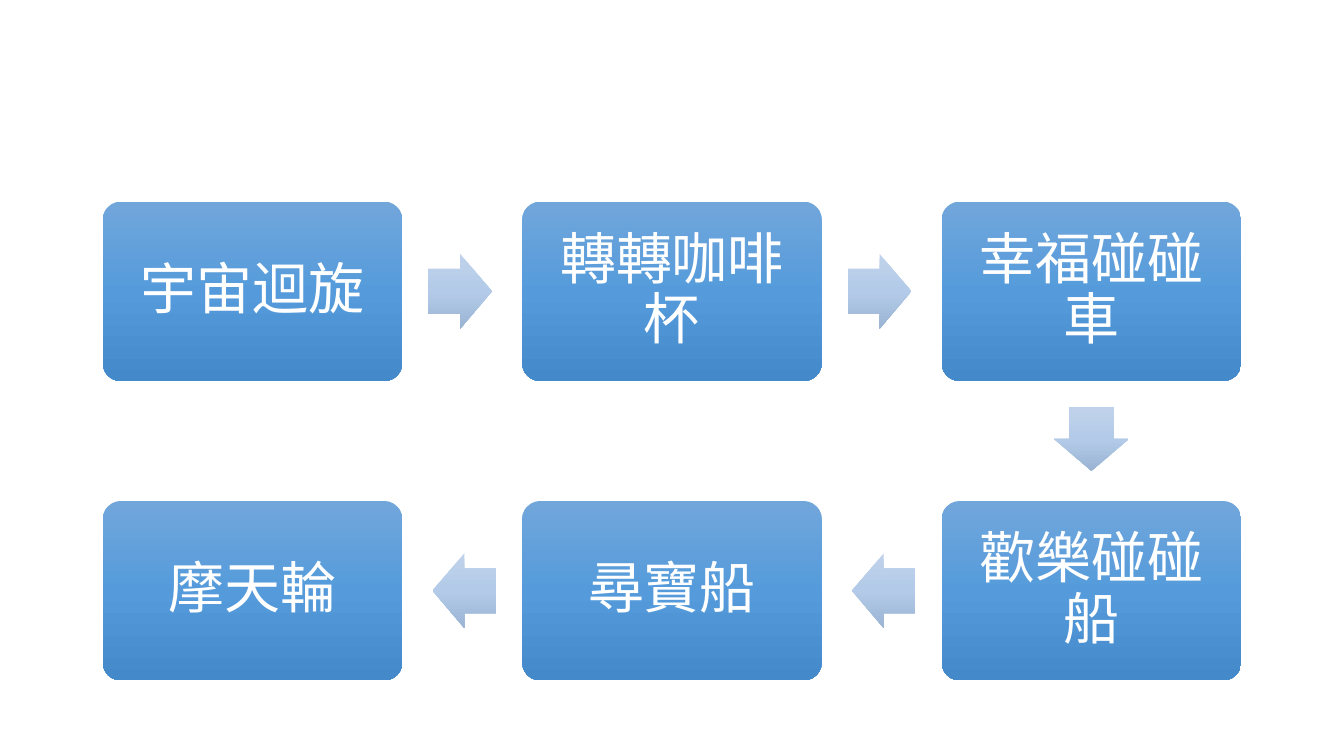
"""Build a slide with a snaking six-step route of amusement rides."""
from dataclasses import dataclass
from itertools import pairwise

from lxml import etree
from pptx import Presentation
from pptx import util as u
from pptx.enum import shapes, text
from pptx.oxml import ns


@dataclass(frozen=True)
class Theme:
    font: str = "Calibri"
    label_size: int = 40
    label_color: str = "FFFFFF"
    ride_stops: tuple = ("71A6DB", "559BDB", "448ACA")
    arrow_stops: tuple = ("C0D2EB", "B3CBE9", "9BB4D3")


RIDES = ("宇宙迴旋", "轉轉咖啡杯", "幸福碰碰車", "歡樂碰碰船", "尋寶船", "摩天輪")
COLUMNS = 3
LEFT, TOP = 1.02, 2
COLUMN_STEP, ROW_STEP = 4.16, 2.97
RIDE_WIDTH, RIDE_HEIGHT = 2.97, 1.78
ARROW_LENGTH, ARROW_BREADTH = 0.63, 0.74
ARROW_GAP = 0.26
PADDING = 0.17


class RouteSlide:
    def __init__(self, slide, theme):
        self.slide = slide
        self.theme = theme

    def gradient_shape(self, kind, center, size, stops, adjustments):
        (x, y), (width, height) = center, size
        shape = self.slide.shapes.add_shape(
            kind, u.Inches(x - width / 2), u.Inches(y - height / 2),
            u.Inches(width), u.Inches(height))
        for index, value in enumerate(adjustments):
            shape.adjustments[index] = value
        shape.shadow.inherit = False
        shape.line.fill.background()
        shape.fill.gradient()
        shape.fill.gradient_angle = 270
        gradient = shape._element.spPr.find(ns.qn("a:gradFill"))
        gradient.set("rotWithShape", "0")
        stop_list = gradient.find(ns.qn("a:gsLst"))
        stop_list.clear()
        for index, color in enumerate(stops):
            position = 100000 * index // (len(stops) - 1)
            stop = etree.SubElement(stop_list, ns.qn("a:gs"), pos=str(position))
            etree.SubElement(stop, ns.qn("a:srgbClr"), val=color)
        return shape

    def ride(self, name, center):
        shape = self.gradient_shape(
            shapes.MSO_SHAPE.ROUNDED_RECTANGLE, center,
            (RIDE_WIDTH, RIDE_HEIGHT), self.theme.ride_stops, (0.1,))
        frame = shape.text_frame
        frame.word_wrap = True
        frame.vertical_anchor = text.MSO_ANCHOR.MIDDLE
        frame.margin_left = frame.margin_right = u.Inches(PADDING)
        frame.margin_top = frame.margin_bottom = u.Inches(PADDING)
        paragraph = frame.paragraphs[0]
        paragraph.text = name
        paragraph.alignment = text.PP_ALIGN.CENTER
        paragraph.line_spacing = 0.9
        paragraph.font.name = self.theme.font
        paragraph.font.size = u.Pt(self.theme.label_size)
        paragraph.font.color.rgb = RGBColor.from_string(self.theme.label_color)

    def arrow(self, start, end):
        (x, y), (end_x, end_y) = start, end
        reach = ARROW_GAP + ARROW_LENGTH / 2
        if end_y > y:
            center, rotation = (x, y + RIDE_HEIGHT / 2 + reach), 90
        elif end_x > x:
            center, rotation = (x + RIDE_WIDTH / 2 + reach, y), 0
        else:
            center, rotation = (x - RIDE_WIDTH / 2 - reach, y), 180
        shape = self.gradient_shape(
            shapes.MSO_SHAPE.RIGHT_ARROW, center,
            (ARROW_LENGTH, ARROW_BREADTH), self.theme.arrow_stops, (0.6, 0.5))
        shape.rotation = rotation


def ride_center(index):
    row, column = divmod(index, COLUMNS)
    if row % 2:
        column = COLUMNS - 1 - column
    return (LEFT + RIDE_WIDTH / 2 + column * COLUMN_STEP,
            TOP + RIDE_HEIGHT / 2 + row * ROW_STEP)


def main():
    presentation = Presentation()
    presentation.slide_width = u.Inches(13.33)
    presentation.slide_height = u.Inches(7.5)
    slide = presentation.slides.add_slide(presentation.slide_layouts[6])
    route = RouteSlide(slide, Theme())
    centers = [ride_center(index) for index in range(len(RIDES))]
    for name, center in zip(RIDES, centers):
        route.ride(name, center)
    for start, end in pairwise(centers):
        route.arrow(start, end)
    presentation.save("out.pptx")


from pptx.dml.color import RGBColor

if __name__ == "__main__":
    main()
